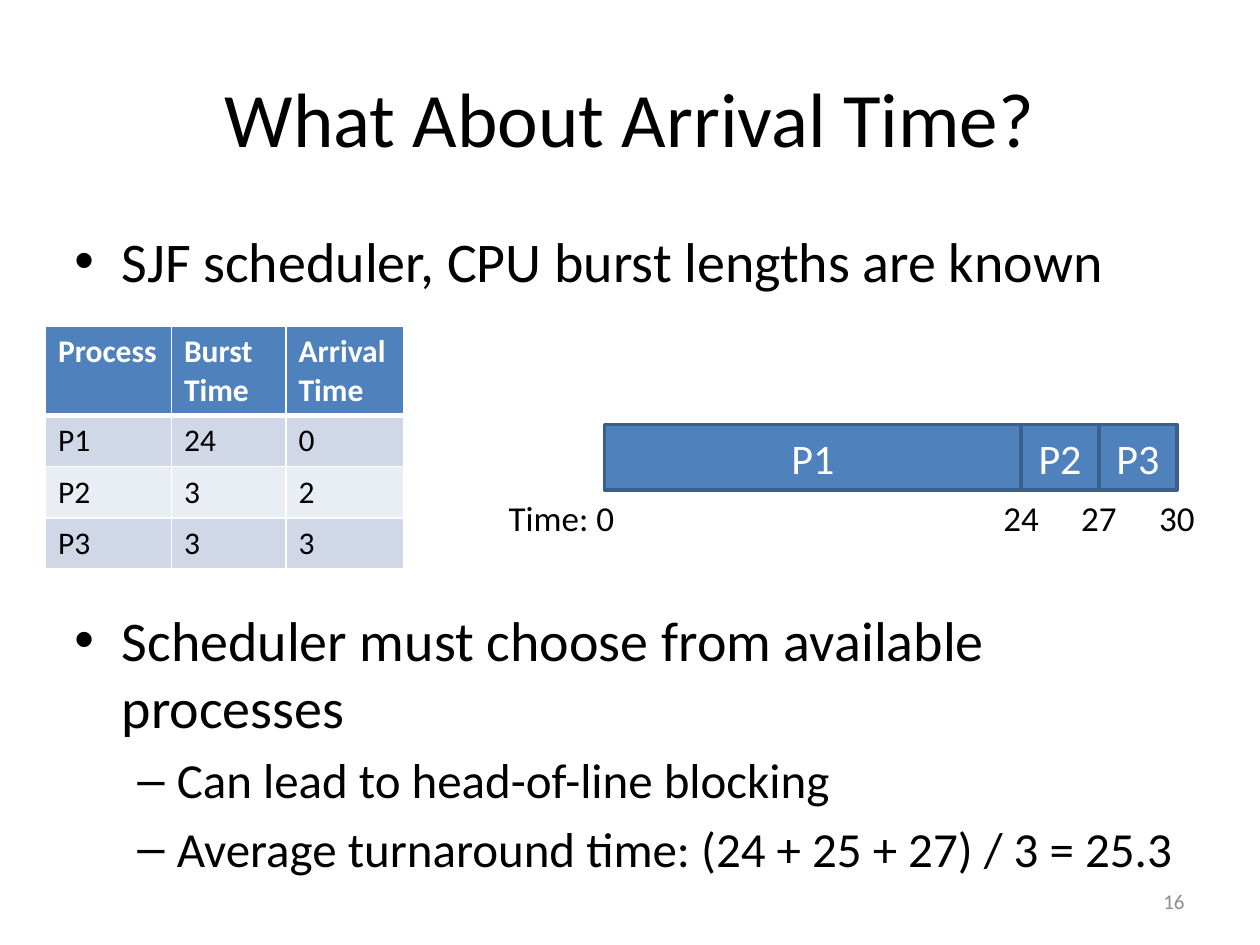
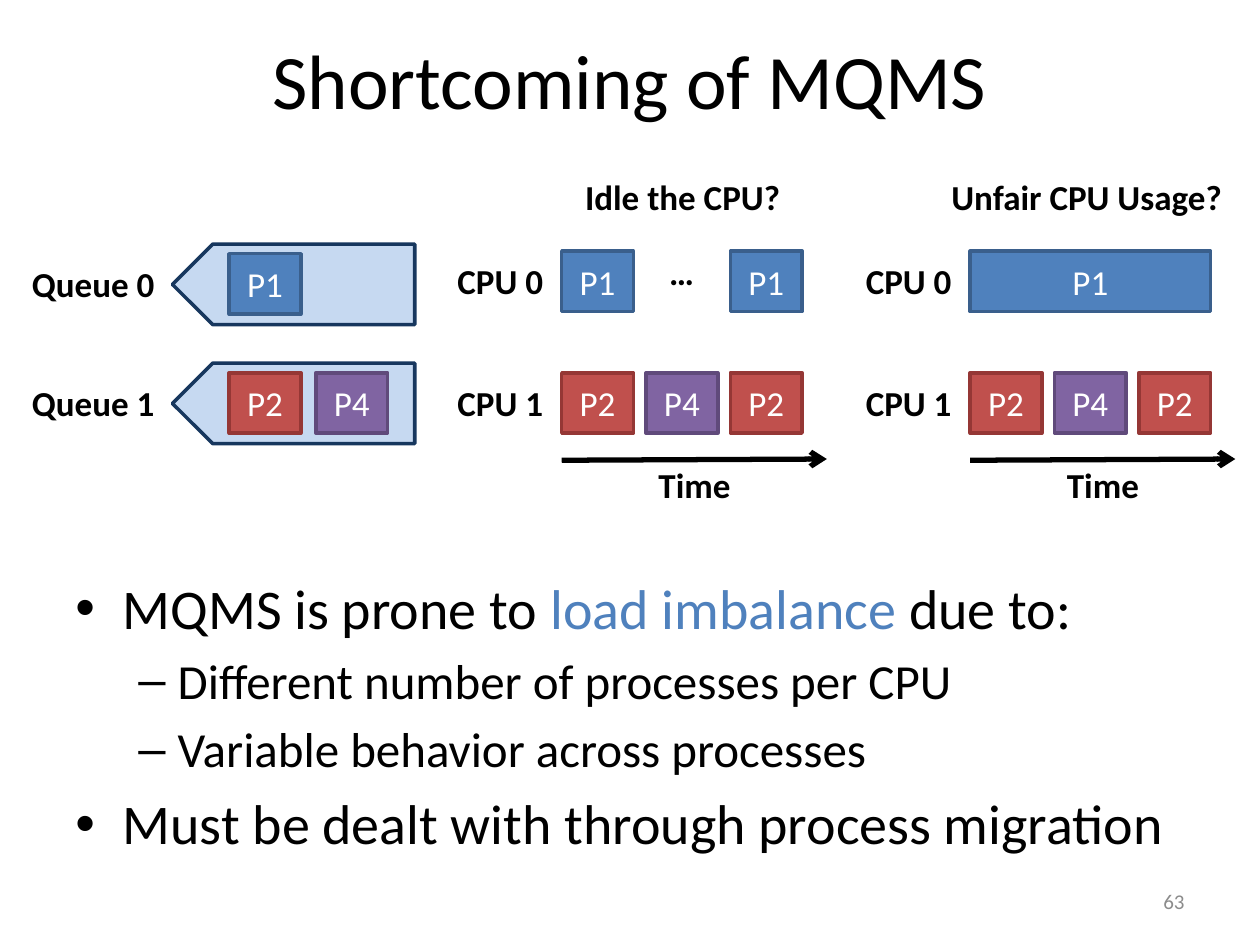
import dataclasses
import itertools
import pptx
import pptx.dml.color
import pptx.enum.shapes
import pptx.enum.text
import pptx.oxml
import pptx.oxml.ns
import pptx.util

Pt = pptx.util.Pt
Shape = pptx.enum.shapes.MSO_SHAPE
Align = pptx.enum.text.PP_ALIGN
Anchor = pptx.enum.text.MSO_ANCHOR
NS = pptx.oxml.ns.nsdecls("a")


@dataclasses.dataclass(frozen=True)
class Theme:
    """Colours and type sizes shared by the slides."""
    font: str = "Calibri"
    ink: str = "000000"
    white: str = "FFFFFF"
    grey: str = "8C8C8C"
    blue: tuple = ("4F81BD", "3A5F8C")
    red: tuple = ("C0504D", "953735")
    purple: tuple = ("8064A2", "604A7B")
    queue: tuple = ("C6D9F1", "17375E")
    bands: tuple = ("D0D8E8", "E9EDF4")
    title: int = 44
    bullets: tuple = (32, 28)
    bar: int = 24
    label: int = 20
    table: int = 18
    footer: int = 12


THEME = Theme()
JOBS = {"P1": THEME.blue, "P2": THEME.red, "P4": THEME.purple}
CHIP_W, CHIP_H, STEP = 41, 34.5, 48.2
LANES = (143.5, 213)


def paint(code):
    """Return the RGB colour for a hex code."""
    return pptx.dml.color.RGBColor.from_string(code)


def write(para, text, size, color=THEME.ink, bold=False):
    """Add one styled run to a paragraph."""
    run = para.add_run()
    run.text = text
    run.font.name = THEME.font
    run.font.size = Pt(size)
    run.font.bold = bold
    run.font.color.rgb = paint(color)


def text_box(shapes, left, top, width, height, wrap=True, anchor=Anchor.TOP):
    """Add an empty text box and return its frame."""
    frame = shapes.add_textbox(Pt(left), Pt(top), Pt(width), Pt(height)).text_frame
    frame.word_wrap = wrap
    frame.vertical_anchor = anchor
    return frame


def label(shapes, text, left, top, width, align=Align.LEFT, bold=True):
    """Add a one-line label."""
    frame = text_box(shapes, left, top, width, 31.5, wrap=False)
    para = frame.paragraphs[0]
    para.alignment = align
    write(para, text, THEME.label, bold=bold)


def block(shapes, left, top, width, height, colors, text="", size=THEME.label,
          kind=Shape.RECTANGLE):
    """Add a filled, outlined shape with optional centred text."""
    shape = shapes.add_shape(kind, Pt(left), Pt(top), Pt(width), Pt(height))
    shape.shadow.inherit = False
    fill, line = colors
    shape.fill.solid()
    shape.fill.fore_color.rgb = paint(fill)
    shape.line.color.rgb = paint(line)
    shape.line.width = Pt(2)
    if text:
        frame = shape.text_frame
        frame.vertical_anchor = Anchor.MIDDLE
        para = frame.paragraphs[0]
        para.alignment = Align.CENTER
        write(para, text, size, THEME.white)
    return shape


def chip(shapes, job, left, top, width=CHIP_W):
    """Add a process block in its own colour."""
    block(shapes, left, top, width, CHIP_H, JOBS[job], job)


def arrow(shapes, left, top, width):
    """Add a time axis that ends in an arrowhead."""
    line = shapes.add_connector(pptx.enum.shapes.MSO_CONNECTOR.STRAIGHT,
                                Pt(left), Pt(top), Pt(left + width), Pt(top - 0.7))
    line.line.color.rgb = paint(THEME.ink)
    line.line.width = Pt(3)
    stroke = line.line._get_or_add_ln()
    stroke.append(pptx.oxml.parse_xml(f'<a:tailEnd {NS} type="arrow"/>'))
    stroke.addnext(pptx.oxml.parse_xml(f"<a:effectLst {NS}/>"))


def bullets(shapes, left, top, width, height, items):
    """Add a bullet list from (level, runs) items."""
    frame = text_box(shapes, left, top, width, height)
    for num, (level, runs) in enumerate(items):
        para = frame.add_paragraph() if num else frame.paragraphs[0]
        para.level = level
        margin, hang, mark = ((27, 27, "•"), (58.5, 22.5, "–"))[level]
        props = para._p.get_or_add_pPr()
        props.set("marL", str(Pt(margin)))
        props.set("indent", str(-Pt(hang)))
        for xml in (f'<a:spcBef {NS}><a:spcPct val="20000"/></a:spcBef>',
                    f'<a:buFont {NS} typeface="Arial"/>',
                    f'<a:buChar {NS} char="{mark}"/>'):
            props.append(pptx.oxml.parse_xml(xml))
        for text, color in runs:
            write(para, text, THEME.bullets[level], color)


def plain(level, text):
    """Return a bullet item made of one black run."""
    return level, [(text, THEME.ink)]


def edge(cell, side, width):
    """Draw a white border on one side of a cell."""
    cell._tc.get_or_add_tcPr().append(pptx.oxml.parse_xml(
        f'<a:ln{side} {NS} w="{Pt(width)}"><a:solidFill>'
        f'<a:srgbClr val="{THEME.white}"/></a:solidFill></a:ln{side}>'))


def grid(shapes, left, top, widths, heights, rows):
    """Add a table with a header row and banded body rows."""
    table = shapes.add_table(len(rows), len(widths), Pt(left), Pt(top),
                             Pt(sum(widths)), Pt(sum(heights))).table
    for col, width in zip(table.columns, widths):
        col.width = Pt(width)
    for num, (row, height, texts) in enumerate(zip(table.rows, heights, rows)):
        row.height = Pt(height)
        head = num == 0
        fill = THEME.blue[0] if head else THEME.bands[(num - 1) % 2]
        for cell, text in zip(row.cells, texts):
            for side, width in zip("LRTB", (1, 1, 3 if num == 1 else 1, 3 if head else 1)):
                edge(cell, side, width)
            cell.fill.solid()
            cell.fill.fore_color.rgb = paint(fill)
            write(cell.text_frame.paragraphs[0], text, THEME.table,
                  THEME.white if head else THEME.ink, head)


def page(deck, title, top, number):
    """Add a slide with its title and page number and return its shapes."""
    shapes = deck.slides.add_slide(deck.slide_layouts[6]).shapes
    para = text_box(shapes, 36, top, 648, 90, anchor=Anchor.MIDDLE).paragraphs[0]
    para.alignment = Align.CENTER
    write(para, title, THEME.title)
    para = text_box(shapes, 516, 500.5, 168, 28.5, anchor=Anchor.MIDDLE).paragraphs[0]
    para.alignment = Align.RIGHT
    write(para, str(number), THEME.footer, THEME.grey)
    return shapes


def gantt(shapes, left, top, jobs):
    """Add a row of bars with the end time under each."""
    widths = [width for _, width, _ in jobs]
    ends = list(itertools.accumulate(widths, initial=left))
    for start, (job, width, _) in zip(ends, jobs):
        block(shapes, start, top, width, 37.5, THEME.blue, job, THEME.bar)
    label(shapes, "Time: 0", left - 62, top + 37.5, 75.5, bold=False)
    for end, (_, _, time) in zip(ends[1:], jobs):
        label(shapes, time, end - 17.5, top + 37.5, 35, Align.CENTER, bold=False)


def queue(shapes, name, top, jobs):
    """Add a named queue that holds its waiting jobs."""
    body = block(shapes, 98.5, top, 138.5, 46, THEME.queue, kind=Shape.PENTAGON)
    body.rotation = 180
    label(shapes, name, 10, top + 7, 85.5, Align.RIGHT)
    for num, job in enumerate(jobs):
        chip(shapes, job, 131 + num * 49.5, top + 5.5)


def panel(shapes, left, title, offset, width):
    """Add a grouped CPU timeline with a busy lower lane; return its shapes."""
    parts = shapes.add_group_shape().shapes
    label(parts, title, left + offset, 96.5, width, Align.RIGHT)
    for num, top in enumerate(LANES):
        label(parts, f"CPU {num}", left - 67.5, top + 1.5, 64, Align.RIGHT)
    for num, job in enumerate(("P2", "P4", "P2")):
        chip(parts, job, left + num * STEP, LANES[1])
    arrow(parts, left, 263, 151.5)
    label(parts, "Time", left + STEP, 261.5, 56)
    return parts


def arrivals(deck):
    """Build the slide about arrival time."""
    shapes = page(deck, "What About Arrival Time?", 21.5, 16)
    bullets(shapes, 35.5, 126, 648, 53.5,
            [plain(0, "SJF scheduler, CPU burst lengths are known")])
    grid(shapes, 26, 186.5, (72, 65.5, 67.5), (51, 29.2, 29.2, 29.2),
         (("Process", "Burst Time", "Arrival Time"),
          ("P1", "24", "0"), ("P2", "3", "2"), ("P3", "3", "3")))
    gantt(shapes, 345.5, 242.5,
          (("P1", 238, "24"), ("P2", 44.5, "27"), ("P3", 44.5, "30")))
    bullets(shapes, 35.5, 342.5, 648, 175.5, [
        plain(0, "Scheduler must choose from available processes"),
        plain(1, "Can lead to head-of-line blocking"),
        plain(1, "Average turnaround time: (24 + 25 + 27) / 3 = 25.3")])


def balance(deck):
    """Build the slide about load imbalance."""
    shapes = page(deck, "Shortcoming of MQMS", 0, 63)
    bullets(shapes, 36, 324, 648, 190, [
        (0, [("MQMS is prone to ", THEME.ink), ("load imbalance", THEME.blue[0]),
             (" due to:", THEME.ink)]),
        plain(1, "Different number of processes per CPU"),
        plain(1, "Variable behavior across processes"),
        plain(0, "Must be dealt with through process migration")])
    queue(shapes, "Queue 0", 139.5, ("P1",))
    queue(shapes, "Queue 1", 207.5, ("P2", "P4"))
    idle = panel(shapes, 321, "Idle the CPU?", 5, 127)
    for num in (0, 2):
        chip(idle, "P1", 321 + num * STEP, LANES[0])
    label(idle, "…", 375, 139.5, 29, Align.CENTER)
    unfair = panel(shapes, 554.4, "Unfair CPU Usage?", -19.5, 170.5)
    chip(unfair, "P1", 554.4, LANES[0], 2 * STEP + CHIP_W)


def main():
    """Build and save the deck."""
    deck = pptx.Presentation()
    deck.slide_width, deck.slide_height = Pt(720), Pt(540)
    arrivals(deck)
    balance(deck)
    deck.save("out.pptx")


if __name__ == "__main__":
    main()
